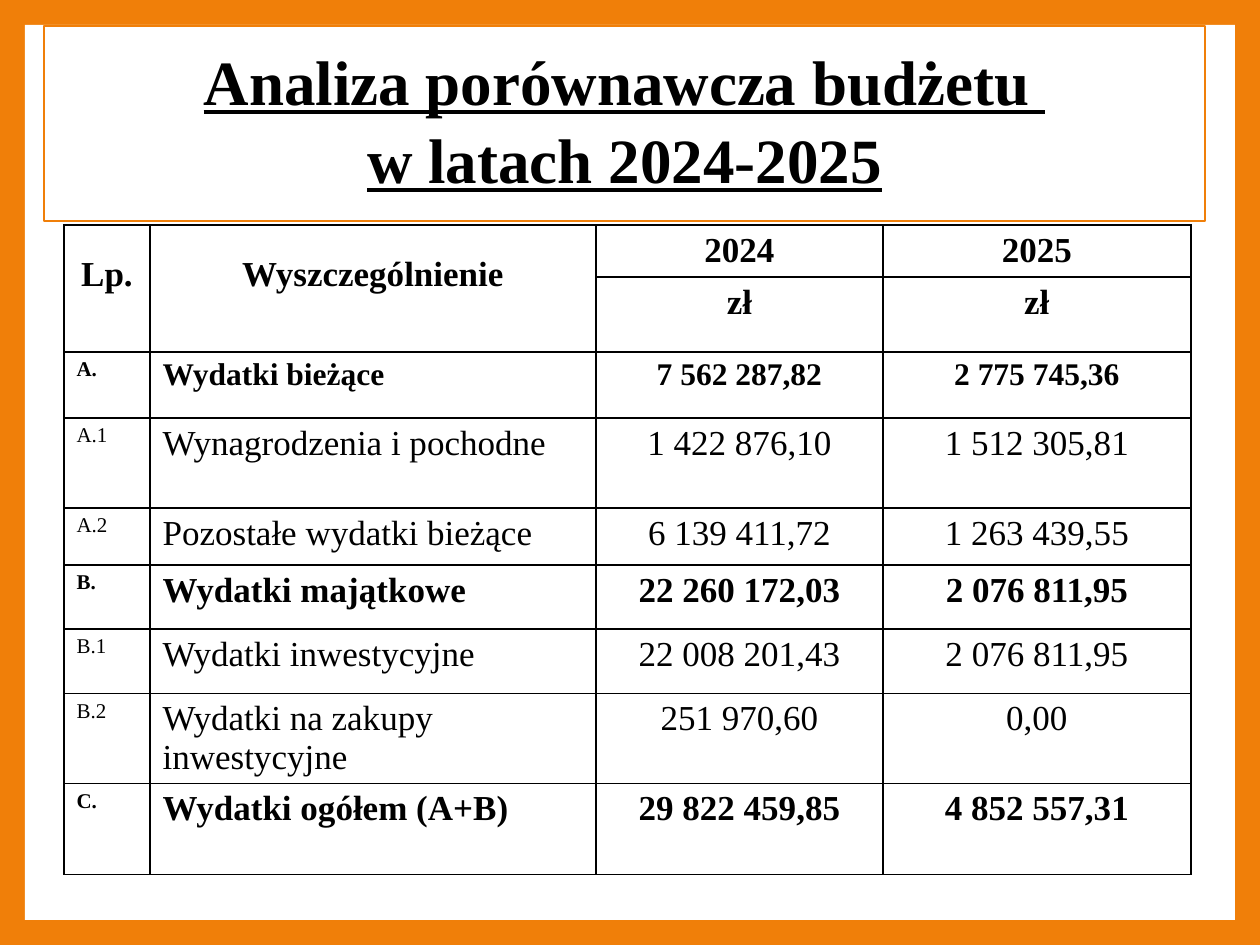
import pptx
import pptx.util
import pptx.dml.color
import pptx.enum.shapes
import pptx.enum.text
import pptx.oxml
import pptx.oxml.ns

PX = 914400 // 126
FONT = "Times New Roman"
ORANGE, WHITE, BLACK = "F07F09", "FFFFFF", "000000"
ALIGN = pptx.enum.text.PP_ALIGN

TITLE = "Analiza porównawcza budżetu \vw latach 2024-2025"
HEADER = [
    ("Lp.", "Wyszczególnienie", "2024", "2025"),
    ("", "", "zł", "zł"),
]
BODY = [
    ("A.", "Wydatki bieżące", "7 562 287,82", "2 775 745,36"),
    ("A.1", "Wynagrodzenia i pochodne", "1 422 876,10", "1 512 305,81"),
    ("A.2", "Pozostałe wydatki bieżące", "6 139 411,72", "1 263 439,55"),
    ("B.", "Wydatki majątkowe", "22 260 172,03", "2 076 811,95"),
    ("B.1", "Wydatki inwestycyjne", "22 008 201,43", "2 076 811,95"),
    ("B.2", "Wydatki na zakupy inwestycyjne", "251 970,60", "0,00"),
    ("C.", "Wydatki ogółem (A+B)", "29 822 459,85", "4 852 557,31"),
]
COLS = [86, 446, 287, 308]
ROWS = [52, 74, 66, 90, 57, 64, 65, 90, 91]


def px(*lengths):
    return [pptx.util.Emu(n * PX) for n in lengths]


def rgb(code):
    return pptx.dml.color.RGBColor.from_string(code)


def write(tf, text, size=20, bold=False, underline=False, align=ALIGN.CENTER,
          top=6, spacing=1.0):
    tf.word_wrap = True
    tf.vertical_anchor = pptx.enum.text.MSO_ANCHOR.TOP
    tf.margin_top = px(top)[0]
    tf.text = text
    p = tf.paragraphs[0]
    p.alignment = align
    p.line_spacing = spacing
    for r in p.runs:
        r.font.name = FONT
        r.font.size = pptx.util.Pt(size)
        r.font.bold = bold
        r.font.underline = underline
        r.font.color.rgb = rgb(BLACK)


def add_borders(cell):
    tcPr = cell._tc.get_or_add_tcPr()
    for side in ("lnL", "lnR", "lnT", "lnB"):
        tcPr.append(pptx.oxml.parse_xml(
            f'<a:{side} {pptx.oxml.ns.nsdecls("a")} w="12700"><a:solidFill>'
            f'<a:srgbClr val="{BLACK}"/></a:solidFill></a:{side}>'))


prs = pptx.Presentation()
prs.slide_width, prs.slide_height = px(1260, 945)
s = prs.slides.add_slide(prs.slide_layouts[5])
s.background.fill.solid()
s.background.fill.fore_color.rgb = rgb(ORANGE)

# Title
title = s.shapes.title
title.left, title.top, title.width, title.height = px(44, 26, 1161, 195)
title.line.color.rgb = rgb(ORANGE)
title.line.width = pptx.util.Pt(0.75)
title.text_frame.auto_size = pptx.enum.text.MSO_AUTO_SIZE.NONE
write(title.text_frame, TITLE, size=36, bold=True, underline=True,
      top=14, spacing=1.03)

# White panel behind the title
panel = s.shapes.add_shape(pptx.enum.shapes.MSO_SHAPE.RECTANGLE,
                           *px(25, 25, 1210, 895))
panel.shadow.inherit = False
panel.fill.solid()
panel.fill.fore_color.rgb = rgb(WHITE)
panel.line.fill.background()
title.element.addprevious(panel.element)

# Budget table
table = s.shapes.add_table(len(ROWS), len(COLS),
                           *px(64, 225, sum(COLS), sum(ROWS))).table
table.first_row = table.horz_banding = False
for col, width in zip(table.columns, px(*COLS)):
    col.width = width
for row, height in zip(table.rows, px(*ROWS)):
    row.height = height
for c in (0, 1):
    table.cell(0, c).merge(table.cell(1, c))

for i, row in enumerate(HEADER + BODY):
    is_header = i < len(HEADER)
    is_total = row[0].endswith(".")
    for c, text in enumerate(row):
        cell = table.cell(i, c)
        add_borders(cell)
        cell.fill.background()
        if cell.is_spanned:
            continue
        size = 20
        if not is_header:
            size = 12 if c == 0 else 18 if row[0] == "A." else 20
        write(cell.text_frame, text, size=size, bold=is_header or is_total,
              align=ALIGN.CENTER if is_header or c > 1 else ALIGN.LEFT)
        cell.margin_left = cell.margin_right = pptx.util.Inches(0.1)
        cell.margin_top = px(30 if cell.is_merge_origin else 6)[0]
        cell.margin_bottom = px(6)[0]
        cell.vertical_anchor = pptx.enum.text.MSO_ANCHOR.TOP

prs.save("out.pptx")
